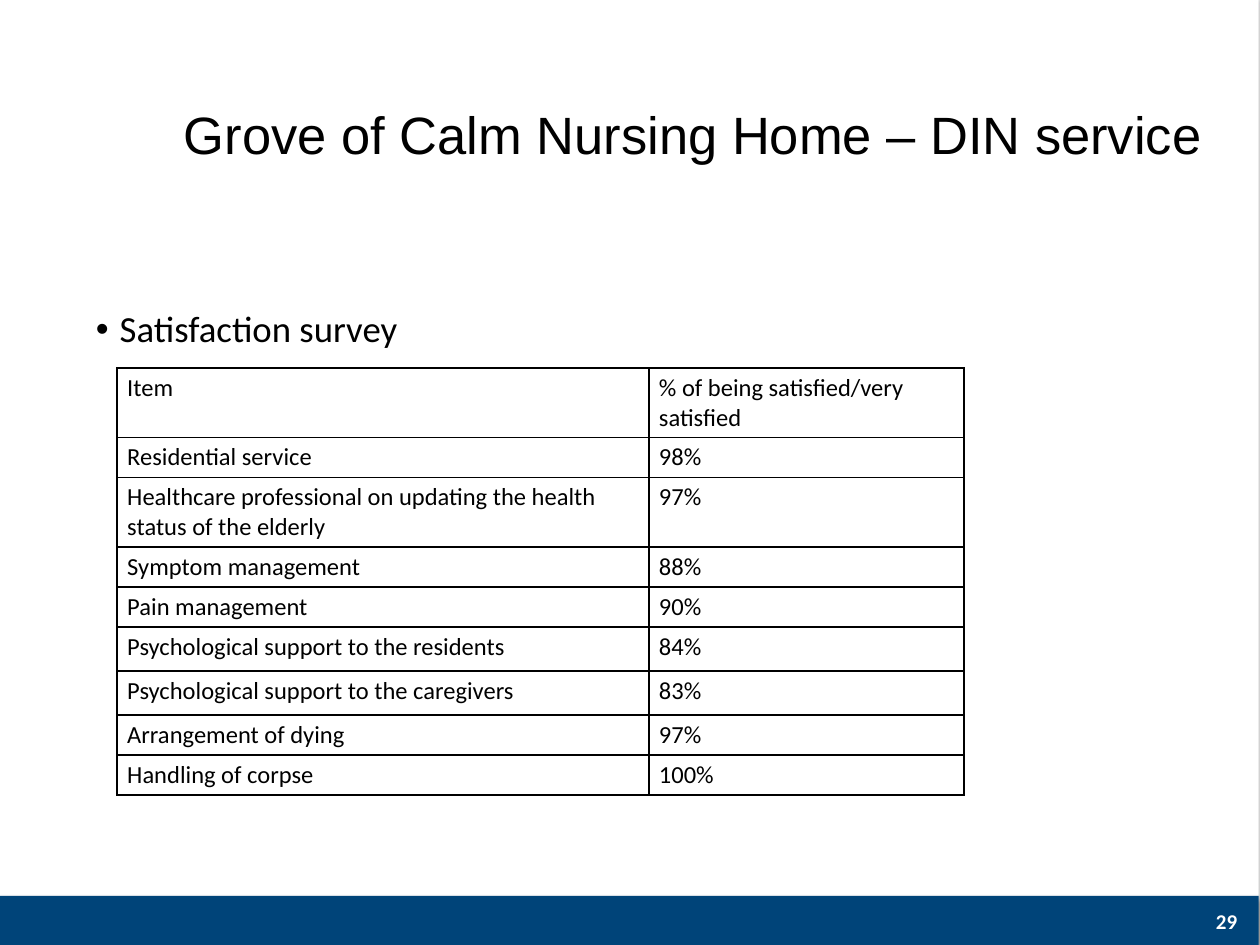
from dataclasses import dataclass

from lxml.etree import SubElement
from pptx import Presentation
from pptx.dml.color import RGBColor
from pptx.enum.shapes import MSO_SHAPE
from pptx.enum.text import MSO_ANCHOR, MSO_AUTO_SIZE, PP_ALIGN
from pptx.oxml.ns import qn
from pptx.util import Inches, Pt

BLACK, WHITE, NAVY = "000000", "FFFFFF", "004479"
BORDER_SIDES = ("a:lnL", "a:lnR", "a:lnT", "a:lnB")


@dataclass
class Area:
    left: float
    top: float
    width: float
    height: float

    def lengths(self) -> tuple:
        return tuple(Inches(n) for n in (self.left, self.top, self.width, self.height))


@dataclass
class Style:
    size: float
    font: str = "Calibri"
    color: str = BLACK
    bold: bool = False


@dataclass
class SurveyItem:
    label: str
    result: str
    height: float = 0.31


ITEMS = [
    SurveyItem("Item", "% of being satisfied/very satisfied", 0.55),
    SurveyItem("Residential service", "98%"),
    SurveyItem("Healthcare professional on updating the health status of the elderly", "97%", 0.55),
    SurveyItem("Symptom management", "88%"),
    SurveyItem("Pain management", "90%"),
    SurveyItem("Psychological support to the residents", "84%", 0.35),
    SurveyItem("Psychological support to the caregivers", "83%", 0.35),
    SurveyItem("Arrangement of dying", "97%"),
    SurveyItem("Handling of corpse", "100%"),
]
COLUMN_WIDTHS = (4.22, 2.5)


def rgb(color: str) -> RGBColor:
    return RGBColor.from_string(color)


def add_span(para, text: str, style: Style) -> None:
    span = para.add_run()
    span.text = text
    span.font.size = Pt(style.size)
    span.font.name = style.font
    span.font.bold = style.bold
    span.font.color.rgb = rgb(style.color)


def set_margins(target, side: float, end: float) -> None:
    target.margin_left = target.margin_right = Inches(side)
    target.margin_top = target.margin_bottom = Inches(end)


def format_frame(frame, anchor, side: float = 0.07, end: float = 0.04) -> None:
    frame.word_wrap = True
    frame.auto_size = MSO_AUTO_SIZE.NONE
    frame.vertical_anchor = anchor
    set_margins(frame, side, end)


def add_panel(page, area: Area, color: str) -> None:
    panel = page.shapes.add_shape(MSO_SHAPE.RECTANGLE, *area.lengths())
    panel.fill.solid()
    panel.fill.fore_color.rgb = rgb(color)
    panel.line.fill.background()
    # Soft shadow straight below
    effects = SubElement(panel._element.spPr, qn("a:effectLst"))
    shadow = SubElement(effects, qn("a:outerShdw"), blurRad=str(Pt(3.1)),
                        dist=str(Pt(1.8)), dir="5400000", rotWithShape="0")
    tint = SubElement(shadow, qn("a:srgbClr"), val=BLACK)
    SubElement(tint, qn("a:alpha"), val="35000")


def add_bullet(para, indent: float) -> None:
    properties = para._p.get_or_add_pPr()
    properties.set("marL", str(Inches(indent)))
    properties.set("indent", str(-Inches(indent)))
    SubElement(properties, qn("a:buFont"), typeface="Arial")
    SubElement(properties, qn("a:buChar"), char="•")


def add_borders(cell) -> None:
    properties = cell._tc.get_or_add_tcPr()
    for side in BORDER_SIDES:
        line = SubElement(properties, qn(side), w=str(Pt(1)))
        fill = SubElement(line, qn("a:solidFill"))
        SubElement(fill, qn("a:srgbClr"), val=BLACK)


def add_survey_table(page, left: float, top: float) -> None:
    area = Area(left, top, sum(COLUMN_WIDTHS), sum(item.height for item in ITEMS))
    table = page.shapes.add_table(len(ITEMS), len(COLUMN_WIDTHS), *area.lengths()).table
    table.first_row = table.horz_banding = False
    for column, width in zip(table.columns, COLUMN_WIDTHS):
        column.width = Inches(width)
    for row, item in zip(table.rows, ITEMS):
        row.height = Inches(item.height)
        for cell, text in zip(row.cells, (item.label, item.result)):
            set_margins(cell, 0.08, 0.04)
            add_borders(cell)
            cell.fill.background()
            add_span(cell.text_frame.paragraphs[0], text, Style(14))


def main() -> None:
    deck = Presentation()
    deck.slide_width, deck.slide_height = Inches(10), Inches(7.5)
    page = deck.slides.add_slide(deck.slide_layouts[5])

    # Background and footer band
    add_panel(page, Area(-0.01, -0.03, 10, 7.53), WHITE)
    add_panel(page, Area(-0.01, 7.11, 10, 0.39), NAVY)

    # Bulleted heading and survey results
    box = page.shapes.add_textbox(*Area(0.69, 2.43, 8.62, 3.57).lengths())
    format_frame(box.text_frame, MSO_ANCHOR.TOP)
    para = box.text_frame.paragraphs[0]
    para.line_spacing = 0.9
    add_bullet(para, 0.19)
    add_span(para, "Satisfaction survey", Style(21))
    add_survey_table(page, 0.93, 2.92)

    # Title, brought in front of the background
    title = page.shapes.title
    title.left, title.top, title.width, title.height = Area(1.39, 0.55, 8.43, 1.09).lengths()
    format_frame(title.text_frame, MSO_ANCHOR.MIDDLE)
    para = title.text_frame.paragraphs[0]
    para.alignment = PP_ALIGN.LEFT
    para.line_spacing = 0.9
    add_span(para, "Grove of Calm Nursing Home – DIN service", Style(30, "Arial"))
    page.shapes._spTree.append(title._element)

    # Page number
    box = page.shapes.add_textbox(*Area(9.48, 7.11, 0.51, 0.4).lengths())
    format_frame(box.text_frame, MSO_ANCHOR.MIDDLE, 0.1, 0.05)
    para = box.text_frame.paragraphs[0]
    para.alignment = PP_ALIGN.CENTER
    add_span(para, "29", Style(12, color=WHITE, bold=True))

    deck.save("out.pptx")


if __name__ == "__main__":
    main()
